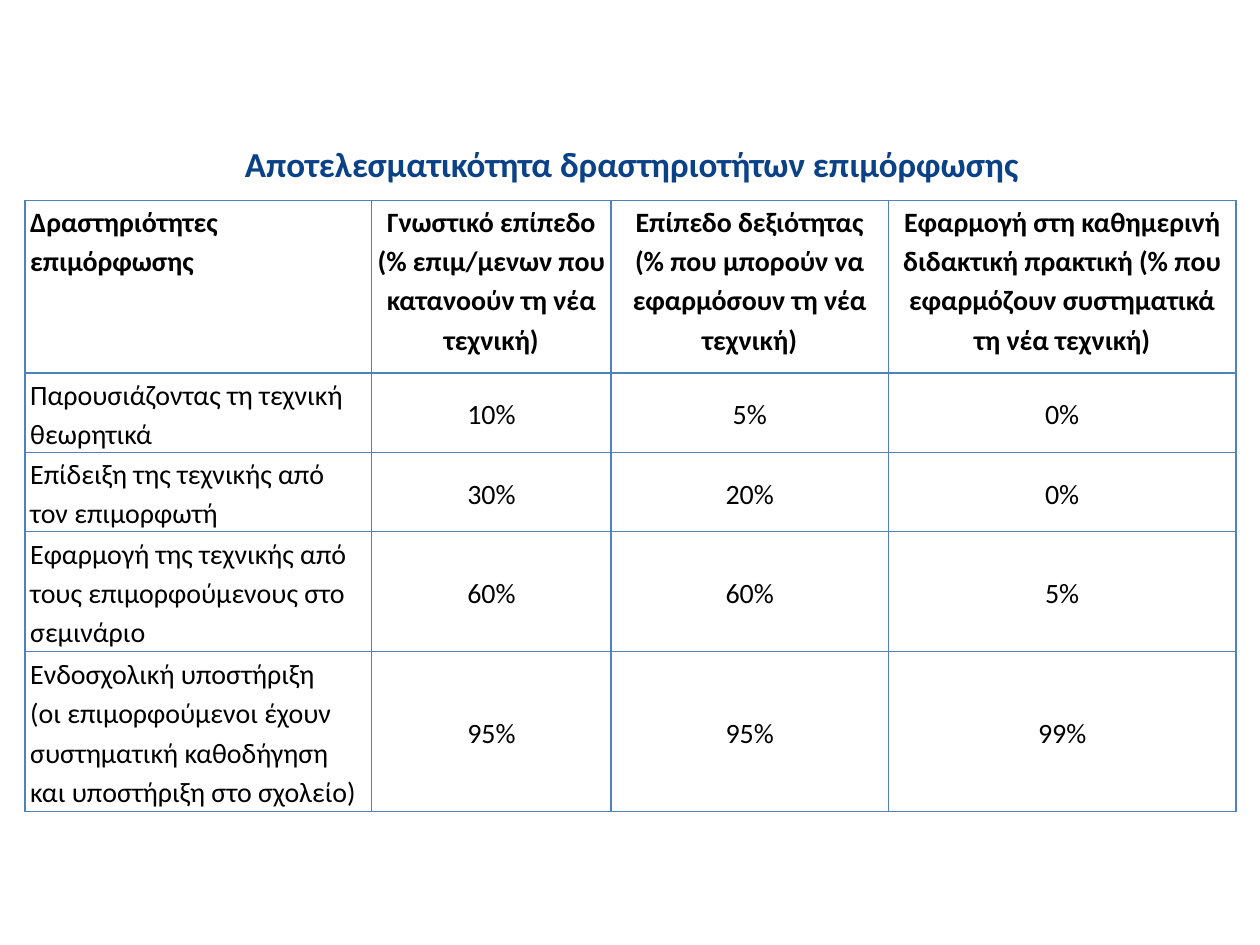
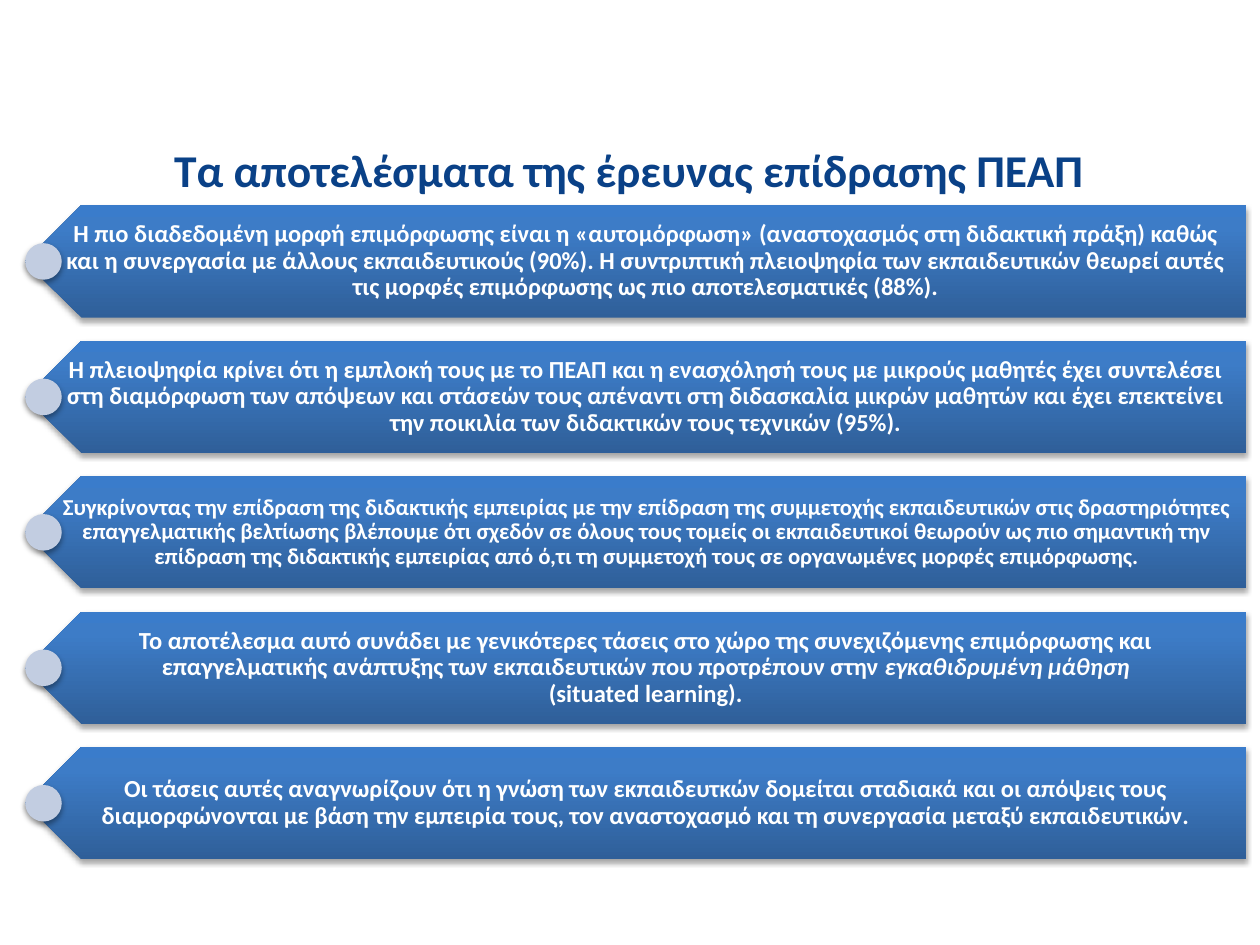
from copy import deepcopy

from pptx import Presentation
from pptx.dml.color import RGBColor
from pptx.enum.shapes import MSO_SHAPE
from pptx.enum.text import MSO_ANCHOR, PP_ALIGN
from pptx.oxml import parse_xml
from pptx.oxml.ns import nsdecls, qn
from pptx.util import Inches, Pt

NAVY, BLUE, PALE, WHITE, BLACK = "0A4187", "4F81BD", "C2CDE1", "FFFFFF", "000000"
FONT = "Calibri"
BAR_STOPS = [(0, "2F5F99"), (80, "3D7CC7"), (100, "3A7CCB")]

COLS = [2.75, 1.9, 2.2, 2.76]
ROWS = [1.37, 0.63, 0.63, 0.95, 1.27]
RESULTS = [
    ["Δραστηριότητες επιμόρφωσης",
     "Γνωστικό επίπεδο (% επιμ/μενων που κατανοούν τη νέα τεχνική)",
     "Επίπεδο δεξιότητας\n(% που μπορούν να εφαρμόσουν τη νέα τεχνική)",
     "Εφαρμογή στη καθημερινή διδακτική πρακτική (% που εφαρμόζουν "
     "συστηματικά τη νέα τεχνική)"],
    ["Παρουσιάζοντας τη τεχνική θεωρητικά", "10%", "5%", "0%"],
    ["Επίδειξη της τεχνικής από τον επιμορφωτή", "30%", "20%", "0%"],
    ["Εφαρμογή της τεχνικής από τους επιμορφούμενους στο σεμινάριο",
     "60%", "60%", "5%"],
    ["Ενδοσχολική υποστήριξη\n(οι επιμορφούμενοι έχουν συστηματική "
     "καθοδήγηση και υποστήριξη στο σχολείο)", "95%", "95%", "99%"],
]

# Each finding: text size, then its runs; every second run is italic.
FINDINGS = [
    (14, ["Η πιο διαδεδομένη μορφή επιμόρφωσης είναι η «αυτομόρφωση» "
          "(αναστοχασμός στη διδακτική πράξη) καθώς και η συνεργασία με άλλους "
          "εκπαιδευτικούς (90%). Η συντριπτική πλειοψηφία των εκπαιδευτικών "
          "θεωρεί αυτές τις μορφές επιμόρφωσης ως πιο αποτελεσματικές (88%)."]),
    (14, ["Η πλειοψηφία κρίνει ότι η εμπλοκή τους με το ΠΕΑΠ και η ενασχόλησή "
          "τους με μικρούς μαθητές έχει συντελέσει στη διαμόρφωση των απόψεων "
          "και στάσεών τους απέναντι στη διδασκαλία μικρών μαθητών και έχει "
          "επεκτείνει την ποικιλία των διδακτικών τους τεχνικών (95%)."]),
    (13, ["Συγκρίνοντας την επίδραση της διδακτικής εμπειρίας με την επίδραση "
          "της συμμετοχής εκπαιδευτικών στις δραστηριότητες επαγγελματικής "
          "βελτίωσης βλέπουμε ότι σχεδόν σε όλους τους τομείς οι εκπαιδευτικοί "
          "θεωρούν ως πιο σημαντική την επίδραση της διδακτικής εμπειρίας από "
          "ό,τι τη συμμετοχή τους σε οργανωμένες μορφές επιμόρφωσης."]),
    (14, ["Το αποτέλεσμα αυτό συνάδει με γενικότερες τάσεις στο χώρο της "
          "συνεχιζόμενης επιμόρφωσης και επαγγελματικής ανάπτυξης των "
          "εκπαιδευτικών που προτρέπουν στην ",
          "εγκαθιδρυμένη μάθηση", "\n(situated learning)."]),
    (14, ["Οι τάσεις αυτές αναγνωρίζουν ότι η γνώση των εκπαιδευτκών δομείται "
          "σταδιακά και οι απόψεις τους διαμορφώνονται με βάση την εμπειρία "
          "τους, τον αναστοχασμό και τη συνεργασία μεταξύ εκπαιδευτικών."]),
]


def paint(color, code):
    color.rgb = RGBColor.from_string(code)


def apply(target, form):
    for name, value in form.items():
        setattr(target, name, value)


def write(frame, runs, size, color, bold=True, align=PP_ALIGN.CENTER, space=1.0):
    """Fill the first paragraph; a newline in a run starts a new line."""
    para = frame.paragraphs[0]
    apply(para, {"alignment": align, "line_spacing": space})
    for index, text in enumerate(runs):
        for turn, line in enumerate(text.split("\n")):
            if turn:
                para.add_line_break()
            if not line:
                continue
            run = para.add_run()
            run.text = line
            apply(run.font, {"name": FONT, "size": Pt(size), "bold": bold,
                             "italic": index % 2 == 1})
            paint(run.font.color, color)
    for mark in para._p.findall(qn("a:br")):
        mark.append(deepcopy(para.runs[0]._r.rPr))


def add_text(slide, box, runs, size, color, pads, anchor, space=1.0):
    frame = slide.shapes.add_textbox(*map(Inches, box)).text_frame
    left, top, right, low = map(Inches, pads)
    apply(frame, {"word_wrap": True, "vertical_anchor": anchor,
                  "margin_left": left, "margin_top": top,
                  "margin_right": right, "margin_bottom": low})
    write(frame, runs, size, color, space=space)


def add_title(slide, left, text, size):
    add_text(slide, (left, 1.08, 9.03, 0.63), [text], size, NAVY,
             (0.1, 0.05, 0.1, 0.05), MSO_ANCHOR.TOP)


def frame_cell(cell):
    cell.fill.background()
    props = cell._tc.get_or_add_tcPr()
    for place, side in enumerate("LRTB"):
        props.insert(place, parse_xml(
            f'<a:ln{side} {nsdecls("a")} w="{Pt(1)}"><a:solidFill>'
            f'<a:srgbClr val="{BLUE}"/></a:solidFill></a:ln{side}>'))


def add_grid(slide):
    box = map(Inches, (0.2, 1.59, sum(COLS), sum(ROWS)))
    table = slide.shapes.add_table(len(ROWS), len(COLS), *box).table
    apply(table, {"first_row": False, "horz_banding": False})
    for col, width in zip(table.columns, COLS):
        col.width = Inches(width)
    for row, height in zip(table.rows, ROWS):
        row.height = Inches(height)
    for i, texts in enumerate(RESULTS):
        for j, text in enumerate(texts):
            cell = table.cell(i, j)
            apply(cell, {"margin_left": Inches(0.04), "margin_right": Inches(0.04),
                         "margin_top": 0, "margin_bottom": 0,
                         "vertical_anchor": MSO_ANCHOR.MIDDLE if i else MSO_ANCHOR.TOP})
            write(cell.text_frame, [text], 16, BLACK, bold=i == 0, space=1.15,
                  align=PP_ALIGN.CENTER if j else PP_ALIGN.LEFT)
            frame_cell(cell)


def add_shape(slide, kind, box):
    """Add a shape without outline and with a soft shadow below it."""
    shape = slide.shapes.add_shape(kind, *map(Inches, box))
    shape.line.fill.background()
    shape.shadow.inherit = False
    shape._element.spPr.find(qn("a:effectLst")).append(parse_xml(
        f'<a:outerShdw {nsdecls("a")} blurRad="{Pt(3.1)}" dist="{Pt(1.8)}" '
        f'dir="5400000" rotWithShape="0"><a:srgbClr val="{BLACK}">'
        '<a:alpha val="35000"/></a:srgbClr></a:outerShdw>'))
    return shape


def shade(shape):
    """Fill with the bar gradient, which stays upright on a turned shape."""
    stops = "".join(f'<a:gs pos="{spot * 1000}"><a:srgbClr val="{code}"/></a:gs>'
                    for spot, code in BAR_STOPS)
    shape._element.spPr.insert(2, parse_xml(
        f'<a:gradFill {nsdecls("a")} rotWithShape="0"><a:gsLst>{stops}</a:gsLst>'
        '<a:lin ang="16200000" scaled="0"/></a:gradFill>'))


def add_bar(slide, top, size, runs):
    box = (0.2, top, 9.69, 0.89)
    bar = add_shape(slide, MSO_SHAPE.PENTAGON, box)
    bar.rotation = 180
    shade(bar)
    add_text(slide, box, runs, size, WHITE, (0.27, 0.06, 0.11, 0.06),
             MSO_ANCHOR.MIDDLE, 0.9)
    dot = add_shape(slide, MSO_SHAPE.OVAL, (0.2, top + 0.3, 0.29, 0.29))
    dot.fill.solid()
    paint(dot.fill.fore_color, PALE)


def main():
    deck = Presentation()
    apply(deck, {"slide_width": Inches(10), "slide_height": Inches(7.5)})
    blank = deck.slide_layouts[6]

    slide = deck.slides.add_slide(blank)
    add_grid(slide)
    add_title(slide, 0.5, "Αποτελεσματικότητα δραστηριοτήτων επιμόρφωσης", 20)

    slide = deck.slides.add_slide(blank)
    add_title(slide, 0.48, "Τα αποτελέσματα της έρευνας επίδρασης ΠΕΑΠ", 26)
    first, last = 1.63, 5.93
    step = (last - first) / (len(FINDINGS) - 1)
    for index, (size, runs) in enumerate(FINDINGS):
        add_bar(slide, first + index * step, size, runs)

    deck.save("out.pptx")


if __name__ == "__main__":
    main()
